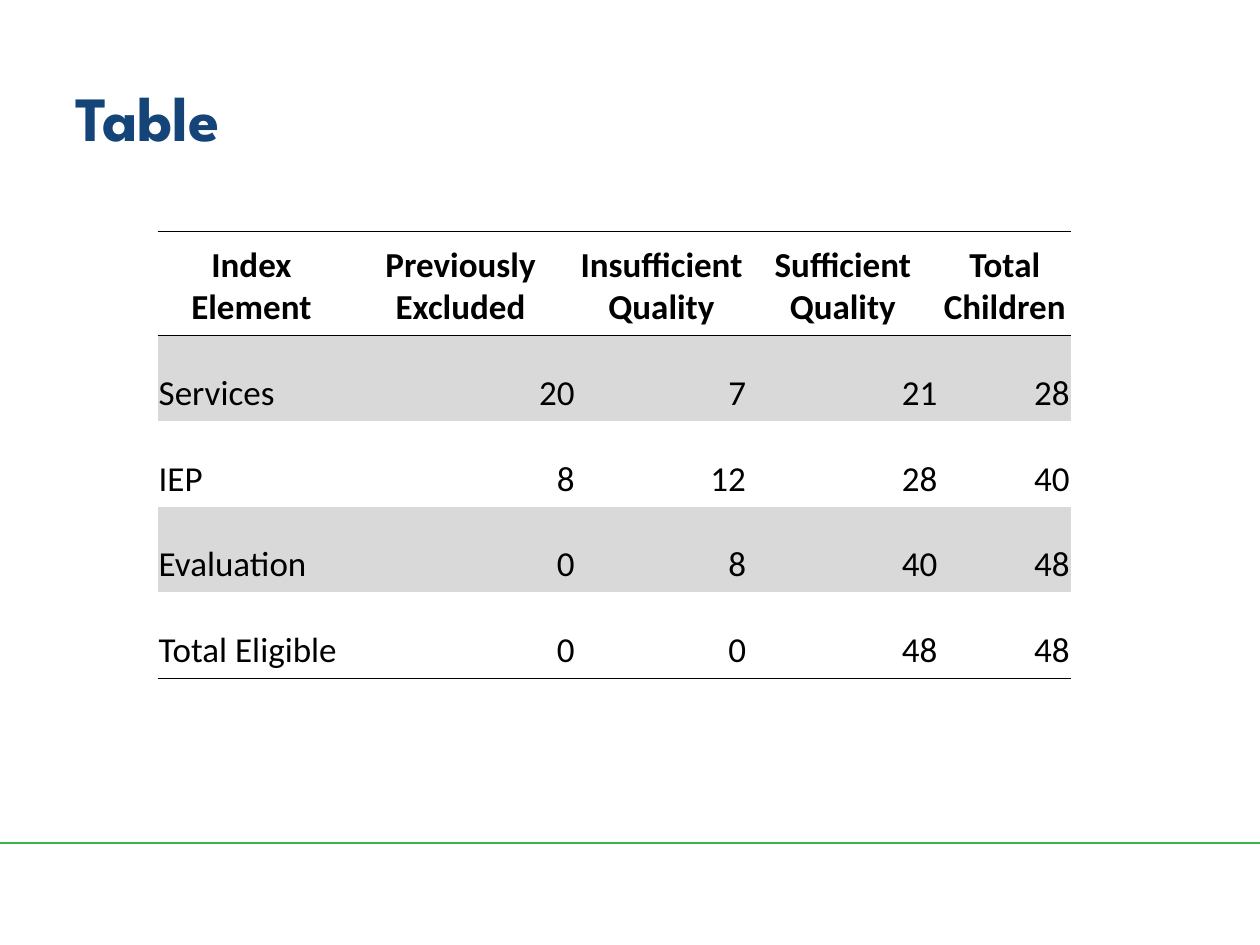
import pptx
import pptx.dml.color
import pptx.enum.shapes
import pptx.enum.text
import pptx.oxml.ns
import pptx.util
from lxml import etree

Pt = pptx.util.Pt
ALIGN = pptx.enum.text.PP_ALIGN
ANCHOR = pptx.enum.text.MSO_ANCHOR
qn = pptx.oxml.ns.qn

COLORS = {"title": "154578", "rule": "39B54A", "ink": "000000", "band": "D9D9D9"}

HEADERS = ["Index Element", "Previously Excluded", "Insufficient Quality",
           "Sufficient Quality", "Total Children"]
ROWS = [
    ["Services", 20, 7, 21, 28],
    ["IEP", 8, 12, 28, 40],
    ["Evaluation", 0, 8, 40, 48],
    ["Total Eligible", 0, 0, 48, 48],
]
COLUMN_WIDTHS = [107.3, 131.8, 97.9, 109.4, 75.6]
HEADER_HEIGHT = 59.8


def rgb(name):
    return pptx.dml.color.RGBColor.from_string(COLORS[name])


def write_text(frame, text, font="Calibri", size=20, color="ink", bold=False,
               align=ALIGN.LEFT):
    frame.word_wrap = True
    paragraph = frame.paragraphs[0]
    paragraph.alignment = align
    run = paragraph.add_run()
    run.text = text
    run.font.name = font
    run.font.size = Pt(size)
    run.font.bold = bold
    run.font.color.rgb = rgb(color)


def set_borders(cell, ruled_sides):
    """Rule the sides named by T and B, and clear the others."""
    properties = cell._tc.get_or_add_tcPr()
    for index, side in enumerate("LRTB"):
        line = etree.Element(qn(f"a:ln{side}"), w=str(Pt(0.5)))
        if side in ruled_sides:
            fill = etree.SubElement(line, qn("a:solidFill"))
            etree.SubElement(fill, qn("a:srgbClr"), val=COLORS["ink"])
        else:
            etree.SubElement(line, qn("a:noFill"))
        properties.insert(index, line)


def add_title(slide, left, top, width, height):
    box = slide.shapes.add_textbox(Pt(left), Pt(top), Pt(width), Pt(height))
    box.text_frame.vertical_anchor = ANCHOR.MIDDLE
    write_text(box.text_frame, "Table", font="League Spartan", size=36,
               color="title", bold=True)


def add_footer_rule(slide, left, top, width):
    rule = slide.shapes.add_connector(
        pptx.enum.shapes.MSO_CONNECTOR.STRAIGHT,
        Pt(left), Pt(top), Pt(left + width), Pt(top))
    rule.line.color.rgb = rgb("rule")
    rule.line.width = Pt(1.5)
    etree.SubElement(rule._element.spPr, qn("a:effectLst"))


def fill_cell(cell, text, row, column):
    is_header = row == 0
    cell.margin_left = cell.margin_right = cell.margin_top = Pt(0.7)
    cell.margin_bottom = Pt(3.6)
    cell.vertical_anchor = ANCHOR.BOTTOM

    if is_header:
        align = ALIGN.CENTER
    else:
        align = ALIGN.LEFT if column == 0 else ALIGN.RIGHT
    write_text(cell.text_frame, text, bold=is_header, align=align)

    # Odd rows are banded
    if row % 2:
        cell.fill.solid()
        cell.fill.fore_color.rgb = rgb("band")
    else:
        cell.fill.background()
    set_borders(cell, {0: "TB", 1: "T", len(ROWS): "B"}.get(row, ""))


def add_quality_table(slide, left, top, width, height):
    content = [HEADERS] + ROWS
    table = slide.shapes.add_table(
        len(content), len(HEADERS), Pt(left), Pt(top), Pt(width), Pt(height)).table
    table.first_row = table.horz_banding = False
    for column, column_width in zip(table.columns, COLUMN_WIDTHS):
        column.width = Pt(column_width)
    body_height = (height - HEADER_HEIGHT) / len(ROWS)
    for row_index, values in enumerate(content):
        table.rows[row_index].height = Pt(body_height if row_index else HEADER_HEIGHT)
        for column_index, value in enumerate(values):
            fill_cell(table.cell(row_index, column_index), str(value),
                      row_index, column_index)


def main():
    presentation = pptx.Presentation()
    presentation.slide_width = Pt(720)
    presentation.slide_height = Pt(540)
    slide = presentation.slides.add_slide(presentation.slide_layouts[6])

    add_footer_rule(slide, 0, 481.7, 720)
    add_title(slide, 36, 21.6, 648, 90)
    add_quality_table(slide, 90, 132, sum(COLUMN_WIDTHS), 255.6)

    presentation.save("out.pptx")


if __name__ == "__main__":
    main()
